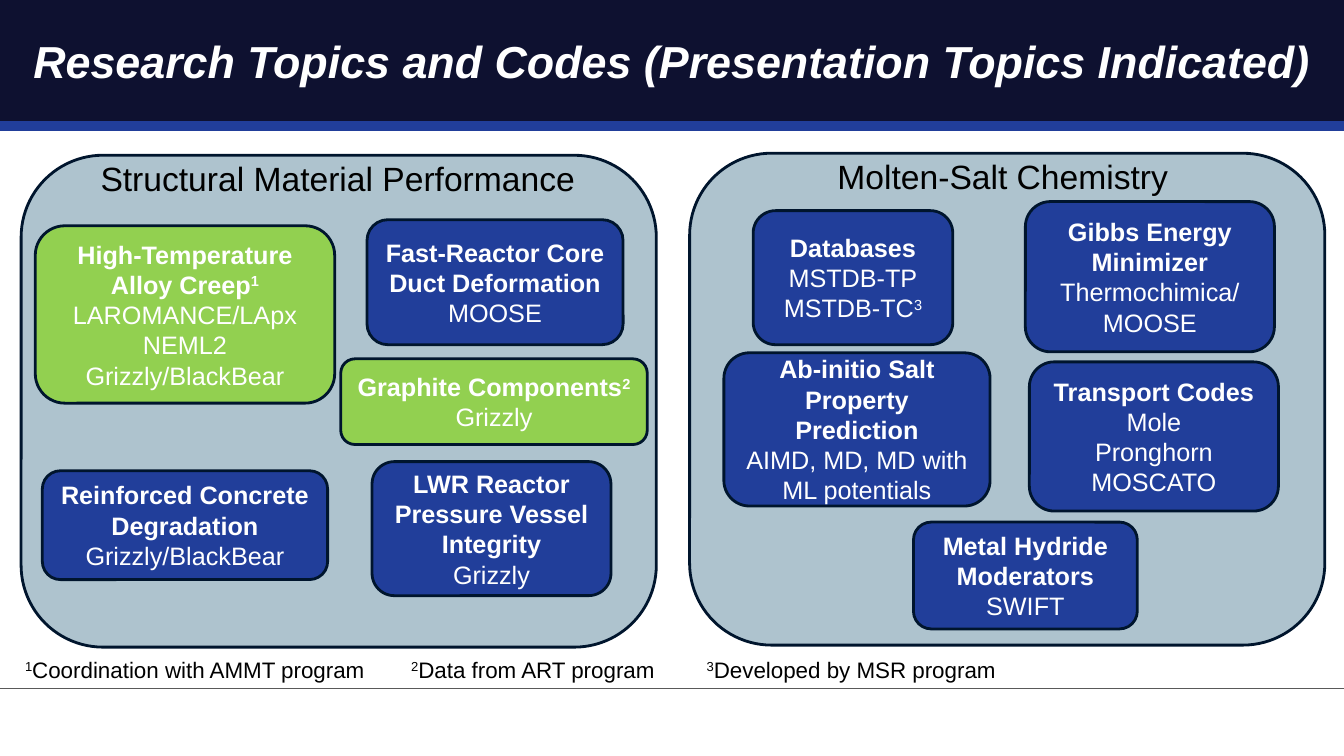
from lxml.etree import SubElement
from pptx import Presentation
from pptx.dml.color import RGBColor
from pptx.enum.shapes import MSO_CONNECTOR, MSO_SHAPE
from pptx.enum.text import MSO_ANCHOR, PP_ALIGN
from pptx.oxml.ns import qn
from pptx.util import Inches, Pt

NAVY = RGBColor(0x0E, 0x11, 0x30)
BLUE = RGBColor(0x21, 0x3E, 0x9A)
GREEN = RGBColor(0x92, 0xD0, 0x50)
PALE = RGBColor(0xAE, 0xC3, 0xCE)
OUTLINE = RGBColor(0x00, 0x15, 0x2D)
GRAY = RGBColor(0x59, 0x59, 0x59)
BLACK = RGBColor(0, 0, 0)
WHITE = RGBColor(0xFF, 0xFF, 0xFF)
FONT = "Arial"

# Content: places are (left, top, width, height) in inches
TITLE = "Research Topics and Codes (Presentation Topics Indicated)"
PANELS = [
    ("Structural Material Performance", (0.21, 1.54, 6.3, 4.88), (0.83, 1.52, 5.04, 0.5)),
    ("Molten-Salt Chemistry", (6.84, 1.52, 6.3, 4.88), (7.39, 1.5, 5.11, 0.5)),
]
# Topic, its note mark, codes as (name, note mark), fill, place
TOPICS = [
    ("High-Temperature Alloy Creep", "1",
     [("LAROMANCE/LApx", ""), ("NEML2", ""), ("Grizzly/BlackBear", "")],
     GREEN, (0.35, 2.24, 2.97, 1.76)),
    ("Reinforced Concrete Degradation", "", [("Grizzly/BlackBear", "")],
     BLUE, (0.42, 4.67, 2.83, 1.08)),
    ("Graphite Components", "2", [("Grizzly", "")], GREEN, (3.38, 3.56, 3.04, 0.85)),
    ("Fast-Reactor Core Duct Deformation", "", [("MOOSE", "")],
     BLUE, (3.64, 2.18, 2.54, 1.24)),
    ("Databases", "", [("MSTDB-TP", ""), ("MSTDB-TC", "3")],
     BLUE, (7.47, 2.09, 1.98, 1.33)),
    ("Gibbs Energy Minimizer", "", [("Thermochimica/", ""), ("MOOSE", "")],
     BLUE, (10.17, 2, 2.47, 1.49)),
    ("Transport Codes", "", [("Mole", ""), ("Pronghorn", ""), ("MOSCATO", "")],
     BLUE, (10.21, 3.59, 2.47, 1.48)),
    ("Ab-initio Salt Property Prediction", "", [("AIMD, MD, MD with ML potentials", "")],
     BLUE, (7.18, 3.5, 2.64, 1.52)),
    ("LWR Reactor Pressure Vessel Integrity", "", [("Grizzly", "")],
     BLUE, (3.69, 4.58, 2.37, 1.33)),
    ("Metal Hydride Moderators", "", [("SWIFT", "")], BLUE, (9.06, 5.18, 2.22, 1.06)),
]
FOOTNOTES = [
    ("1", "Coordination with AMMT program", (0.15, 6.46, 3.73, 0.37)),
    ("2", "Data from ART program", (3.98, 6.46, 2.77, 0.37)),
    ("3", "Developed by MSR program", (6.91, 6.46, 3.18, 0.37)),
]


def add_span(para, text, size, color, bold=False, italic=False, raised=False):
    span = para.add_run()
    span.text = text
    font = span.font
    font.name, font.size, font.bold, font.italic = FONT, Pt(size), bold, italic
    font.color.rgb = color
    if raised:
        span._r.get_or_add_rPr().set("baseline", "30000")


def add_box(page, kind, place, fill, outline=None):
    box = page.shapes.add_shape(kind, *map(Inches, place))
    box.shadow.inherit = False
    box.fill.solid()
    box.fill.fore_color.rgb = fill
    if outline is None:
        box.line.fill.background()
    else:
        box.line.color.rgb = outline
        box.line.width = Pt(2)
    return box


def add_text_box(page, place, wrap=True):
    frame = page.shapes.add_textbox(*map(Inches, place)).text_frame
    frame.word_wrap = wrap
    return frame


def add_rule(page, top, color, width):
    rule = page.shapes.add_connector(
        MSO_CONNECTOR.STRAIGHT, Inches(-0.03), Inches(top), Inches(13.37), Inches(top))
    rule.line.color.rgb = color
    rule.line.width = Pt(width)
    SubElement(rule._element.spPr, qn("a:effectLst"))


def add_topic(page, topic, mark, codes, fill, place):
    box = add_box(page, MSO_SHAPE.ROUNDED_RECTANGLE, place, fill, OUTLINE)
    frame = box.text_frame
    frame.word_wrap = True
    frame.vertical_anchor = MSO_ANCHOR.MIDDLE
    for index, (text, note) in enumerate([(topic, mark)] + codes):
        para = frame.add_paragraph() if index else frame.paragraphs[0]
        para.alignment = PP_ALIGN.CENTER
        bold = index == 0
        add_span(para, text, 18, WHITE, bold)
        if note:
            add_span(para, note, 18, WHITE, bold, raised=True)


def main():
    deck = Presentation()
    deck.slide_width, deck.slide_height = Inches(13.33), Inches(7.5)
    page = deck.slides.add_slide(deck.slide_layouts[6])

    # Header band and rules
    add_box(page, MSO_SHAPE.RECTANGLE, (-0.03, 0, 13.4, 1.25), NAVY)
    add_rule(page, 1.25, BLUE, 6.75)
    add_rule(page, 6.83, GRAY, 1)
    frame = add_text_box(page, (0.33, 0.33, 12.78, 0.75))
    frame.margin_left = frame.margin_right = frame.margin_top = frame.margin_bottom = 0
    add_span(frame.paragraphs[0], TITLE, 32, WHITE, bold=True, italic=True)

    # Panels with headings
    for heading, panel_place, heading_place in PANELS:
        add_box(page, MSO_SHAPE.ROUNDED_RECTANGLE, panel_place, PALE, OUTLINE)
        para = add_text_box(page, heading_place).paragraphs[0]
        para.alignment = PP_ALIGN.CENTER
        add_span(para, heading, 24, BLACK)

    # Topics
    for topic in TOPICS:
        add_topic(page, *topic)

    # Footnotes
    for mark, text, place in FOOTNOTES:
        para = add_text_box(page, place, wrap=False).paragraphs[0]
        add_span(para, mark, 16, BLACK, raised=True)
        add_span(para, text, 16, BLACK)

    deck.save("out.pptx")


if __name__ == "__main__":
    main()
